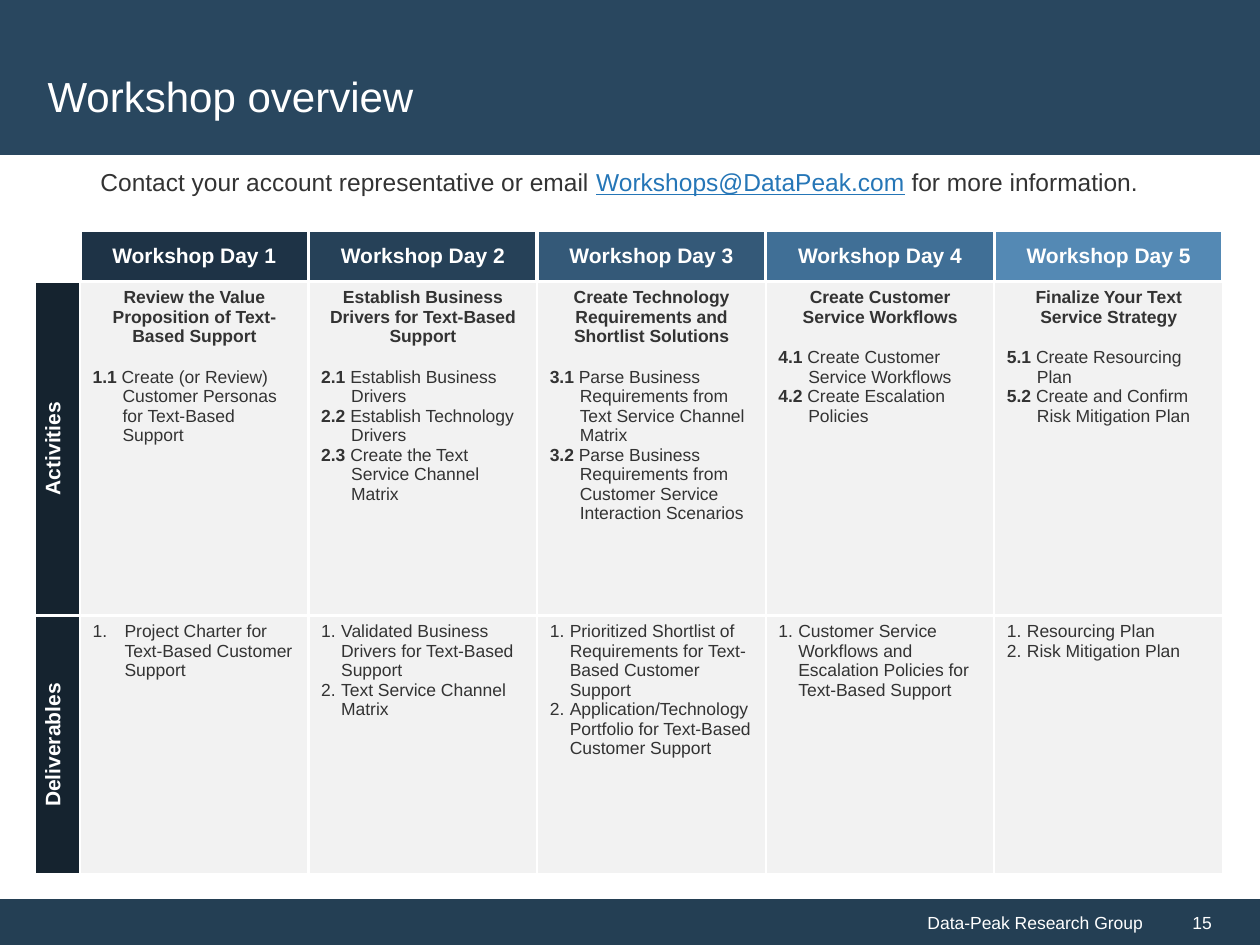
from lxml import etree
from pptx import Presentation
from pptx import util as u
from pptx.dml.color import RGBColor
from pptx.enum import shapes, text
from pptx.oxml.ns import qn

WHITE, INK, PANEL, LABEL = "FFFFFF", "333333", "F2F2F2", "15232F"
BAND, FOOTER, LINK = "29475F", "243F54", "2576B7"
LEFT, CENTER, RIGHT = text.PP_ALIGN.LEFT, text.PP_ALIGN.CENTER, text.PP_ALIGN.RIGHT
MIDDLE = text.MSO_ANCHOR.MIDDLE

# header colour, theme, activities, deliverables, hanging indent of deliverables
DAYS = [
    ("1E3346", "Review the Value Proposition of Text-Based Support",
     ["Create (or Review) Customer Personas for Text-Based Support"],
     ["Project Charter for Text-Based Customer Support"], 32),
    ("264158", "Establish Business Drivers for Text-Based Support",
     ["Establish Business Drivers", "Establish Technology Drivers",
      "Create the Text Service Channel Matrix"],
     ["Validated Business Drivers for Text-Based Support",
      "Text Service Channel Matrix"], 20),
    ("345978", "Create Technology Requirements and Shortlist Solutions",
     ["Parse Business Requirements from Text Service Channel Matrix",
      "Parse Business Requirements from Customer Service Interaction Scenarios"],
     ["Prioritized Shortlist of Requirements for Text-Based Customer Support",
      "Application/Technology Portfolio for Text-Based Customer Support"], 20),
    ("406F96", "Create Customer Service Workflows",
     ["Create Customer Service Workflows", "Create Escalation Policies"],
     ["Customer Service Workflows and Escalation Policies for Text-Based Support"], 20),
    ("5489B4", "Finalize Your Text Service Strategy",
     ["Create Resourcing Plan", "Create and Confirm Risk Mitigation Plan"],
     ["Resourcing Plan", "Risk Mitigation Plan"], 20),
]


def px(n):
    return u.Emu(round(n * 914400 / 126))


def color(value):
    return RGBColor.from_string(value)


def paint(fill, value):
    fill.solid()
    fill.fore_color.rgb = color(value)


def add_run(p, words, size=10, ink=INK, bold=False, underline=False):
    r = p.add_run()
    r.text = words
    f = r.font
    f.name, f.size, f.bold, f.underline = "Arial", u.Pt(size), bold, underline
    f.color.rgb = color(ink)


def write(tf, words, align=LEFT, after=0, margin=0, hang=0, numbered=False,
          lead="", **font):
    """Add one paragraph, using the empty first one if there is one."""
    p = tf.paragraphs[0]
    if p.runs:
        p = tf.add_paragraph()
    p.alignment, p.space_before, p.space_after = align, u.Pt(0), u.Pt(after)
    pPr = p._p.get_or_add_pPr()
    pPr.set("marL", str(px(margin + hang)))
    pPr.set("indent", str(px(-hang)))
    if numbered:
        etree.SubElement(pPr, qn("a:buFont"), typeface="+mj-lt")
        etree.SubElement(pPr, qn("a:buAutoNum"), type="arabicPeriod")
    if lead:
        add_run(p, lead, **{**font, "bold": True})
    add_run(p, words, **font)
    return p


def add_band(slide, x, y, w, h, fill):
    sp = slide.shapes.add_shape(shapes.MSO_SHAPE.RECTANGLE, px(x), px(y), px(w), px(h))
    sp.shadow.inherit = False
    paint(sp.fill, fill)
    sp.line.fill.background()
    sp.text_frame.vertical_anchor = MIDDLE
    return sp


def set_borders(cell, side_width):
    tcPr = cell._tc.get_or_add_tcPr()
    widths = {"lnL": side_width, "lnR": side_width, "lnT": 1.5, "lnB": 1.5}
    for i, (tag, width) in enumerate(widths.items()):
        ln = etree.Element(qn("a:" + tag), w=str(u.Pt(width)))
        fill = etree.SubElement(ln, qn("a:solidFill"))
        etree.SubElement(fill, qn("a:srgbClr"), val=WHITE)
        tcPr.insert(i, ln)


def header(slide, x, y, w, h):
    add_band(slide, x, y, w, h, BAND)
    title = slide.shapes.title
    slide.shapes._spTree.append(title._element)  # bring in front of the band
    title.left, title.top, title.width, title.height = px(x + 35), px(y + 35), px(w - 72), px(h - 34)
    title.text_frame.vertical_anchor = MIDDLE
    write(title.text_frame, "Workshop overview", size=24, ink=WHITE)


def contact_line(slide, x, y, w, h):
    tf = slide.shapes.add_textbox(px(x), px(y), px(w), px(h)).text_frame
    tf.word_wrap, tf.vertical_anchor = True, MIDDLE
    p = write(tf, "Contact your account representative or email ", size=14)
    add_run(p, "Workshops@DataPeak.com", size=14, ink=LINK, underline=True)
    add_run(p, " for more information.", size=14)


def schedule(slide, x, y, w, label_w, row_heights):
    frame = slide.shapes.add_table(len(row_heights), len(DAYS) + 1,
                                   px(x), px(y), px(w), px(sum(row_heights)))
    table = frame.table
    table.first_row = table.horz_banding = False
    for row, height in zip(table.rows, row_heights):
        row.height = px(height)
    for i, column in enumerate(table.columns):
        column.width = px((w - label_w) / len(DAYS) if i else label_w)

    for r in range(len(row_heights)):
        for c in range(len(DAYS) + 1):
            cell = table.cell(r, c)
            paint(cell.fill, PANEL)
            set_borders(cell, 1.5 if r else 2.25)
    table.cell(0, 0).fill.background()

    # Row labels
    for r, label in enumerate(["Activities", "Deliverables"], 1):
        cell = table.cell(r, 0)
        paint(cell.fill, LABEL)
        cell.vertical_anchor = MIDDLE
        cell._tc.get_or_add_tcPr().set("vert", "vert270")
        write(cell.text_frame, label, CENTER, after=5, size=12, ink=WHITE, bold=True)

    # One column per day
    for day, (fill, theme, activities, deliverables, hang) in enumerate(DAYS, 1):
        head, top, bottom = (table.cell(r, day) for r in range(3))
        paint(head.fill, fill)
        head.vertical_anchor = MIDDLE
        write(head.text_frame, f"Workshop Day {day}", CENTER, size=12, ink=WHITE, bold=True)
        write(top.text_frame, theme, CENTER, after=12, bold=True)
        for n, activity in enumerate(activities, 1):
            write(top.text_frame, activity, hang=30, lead=f"{day}.{n} ")
        for deliverable in deliverables:
            write(bottom.text_frame, deliverable, hang=hang, numbered=True)


def footer(slide, x, y, w, h, number_w):
    name = add_band(slide, x, y, w - number_w, h, FOOTER)
    write(name.text_frame, "Data-Peak Research Group", RIGHT, ink=WHITE)
    number = add_band(slide, x + w - number_w, y, number_w, h, FOOTER)
    write(number.text_frame, "15", margin=25, ink=WHITE)


def main():
    prs = Presentation()
    prs.slide_width, prs.slide_height = px(1260), px(945)
    slide = prs.slides.add_slide(prs.slide_layouts[5])
    footer(slide, 0, 899, 1260, 46, number_w=105)
    header(slide, 0, 0, 1260, 155)
    contact_line(slide, 88, 158, 1130, 48)
    schedule(slide, 35, 231, 1188, label_w=45, row_heights=[40, 334, 259])
    prs.save("out.pptx")


if __name__ == "__main__":
    main()
